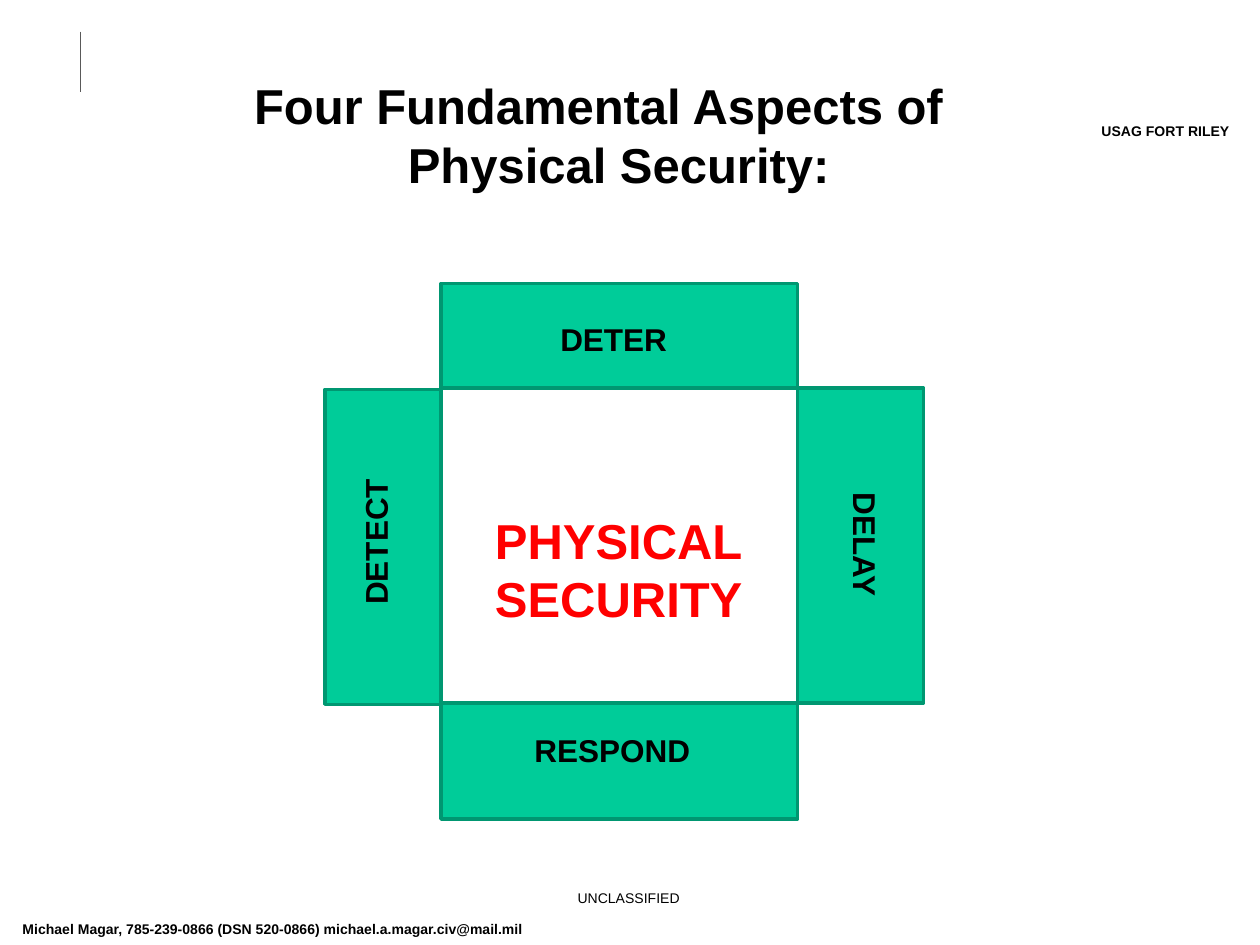
from lxml import etree
from pptx import Presentation
from pptx.dml.color import RGBColor
from pptx.enum.shapes import MSO_CONNECTOR, MSO_SHAPE
from pptx.enum.text import MSO_ANCHOR, MSO_AUTO_SIZE, PP_ALIGN
from pptx.oxml.ns import qn
from pptx.util import Inches, Pt

LEFT, CENTER = PP_ALIGN.LEFT, PP_ALIGN.CENTER
TITLE_ONLY = 5
BLACK, RED, GREEN, DARK_GREEN, GRAY = "000000", "FF0000", "00CC99", "009771", "595959"

# panel place, panel turn, label, label place, label turn
ASPECTS = [
    ((3.5, 2.25, 2.83, 0.83), 0, "DETER", (4.08, 2.49, 1.58, 0.5), 0),
    ((5.58, 3.83, 2.5, 1), 90, "DELAY", (6.06, 4.07, 1.52, 0.5), 90),
    ((3.5, 5.58, 2.83, 0.92), 0, "RESPOND", (3.81, 5.75, 2.1, 0.5), 0),
    ((1.79, 3.88, 2.5, 0.92), 90, "DETECT", (1.98, 4.05, 2.1, 0.5), 270),
]

# text, place, alignment, bold
MARKINGS = [
    ("Michael Magar, 785-239-0866 (DSN 520-0866) michael.a.magar.civ@mail.mil",
     (0.08, 7.26, 6.22, 0.24), LEFT, False or True),
    ("UNCLASSIFIED", (3.68, 7.01, 2.62, 0.24), CENTER, False),
    ("USAG FORT RILEY", (8.59, 0.92, 1.32, 0.24), CENTER, True),
]


def color(value):
    return RGBColor.from_string(value)


def inches(place):
    return [Inches(value) for value in place]


def write(frame, lines, size, align=CENTER, bold=True, ink=BLACK):
    """Fill a text frame with one formatted paragraph per line."""
    font_format = {"name": "Arial", "size": Pt(size), "bold": bold}
    frame.vertical_anchor = MSO_ANCHOR.TOP
    for index, line in enumerate(lines):
        para = frame.add_paragraph() if index else frame.paragraphs[0]
        para.alignment = align
        span = para.add_run()
        span.text = line
        for name, value in font_format.items():
            setattr(span.font, name, value)
        span.font.color.rgb = color(ink)


def add_label(page, lines, place, size, wrap=True, turn=0, **text_format):
    box = page.shapes.add_textbox(*inches(place))
    box.rotation = turn
    box.text_frame.word_wrap = wrap
    write(box.text_frame, lines, size, **text_format)


def add_panel(page, place, turn):
    panel = page.shapes.add_shape(MSO_SHAPE.RECTANGLE, *inches(place))
    panel.rotation = turn
    panel.shadow.inherit = False
    panel.fill.solid()
    panel.fill.fore_color.rgb = color(GREEN)
    panel.line.color.rgb = color(DARK_GREEN)
    panel.line.width = Pt(2)


def add_rule(page, ends):
    rule = page.shapes.add_connector(MSO_CONNECTOR.STRAIGHT, *inches(ends))
    rule.line.color.rgb = color(GRAY)
    rule.line.width = Pt(0.75)
    etree.SubElement(rule._element.spPr, qn("a:effectLst"))


def set_title(page, text, place):
    title = page.shapes.title
    for name, value in zip(("left", "top", "width", "height"), inches(place)):
        setattr(title, name, value)
    title.text_frame.auto_size = MSO_AUTO_SIZE.NONE
    write(title.text_frame, [text], 28)
    properties = title.text_frame.paragraphs[0]._p.get_or_add_pPr()
    properties.set("marL", str(Inches(0.32)))
    properties.set("indent", str(Inches(-0.32)))


def main():
    deck = Presentation()
    deck.slide_width, deck.slide_height = Inches(10), Inches(7.5)
    page = deck.slides.add_slide(deck.slide_layouts[TITLE_ONLY])

    add_rule(page, (0.64, 0.25, 0.64, 0.73))
    for text, place, align, bold in MARKINGS:
        add_label(page, [text], place, 8, align=align, bold=bold)
    set_title(page, "Four Fundamental Aspects of Physical Security:", (1.5, 0.55, 6.5, 1.41))
    add_label(page, ["PHYSICAL", "SECURITY"], (3.83, 4, 2.31, 1.04), 28,
              wrap=False, align=LEFT, ink=RED)
    for panel_place, panel_turn, label, label_place, label_turn in ASPECTS:
        add_panel(page, panel_place, panel_turn)
        add_label(page, [label], label_place, 18, turn=label_turn)

    deck.save("out.pptx")


if __name__ == "__main__":
    main()
